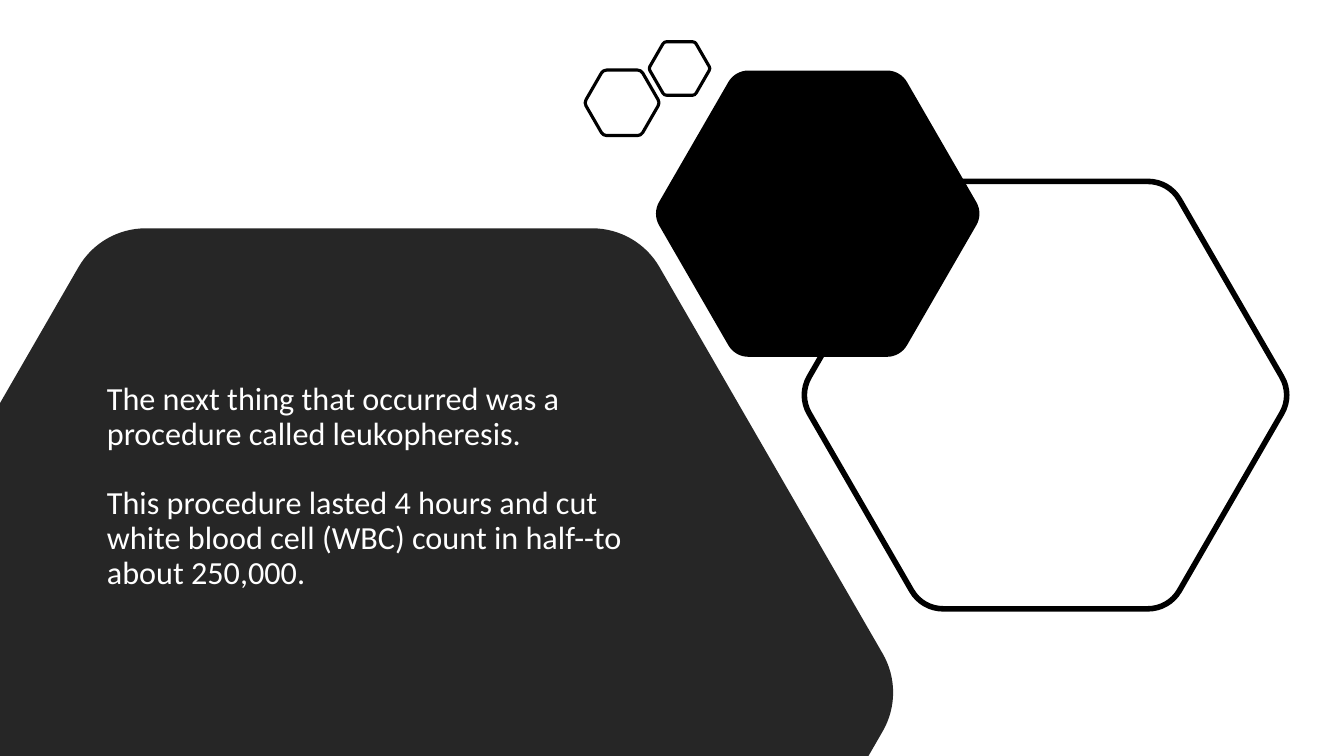
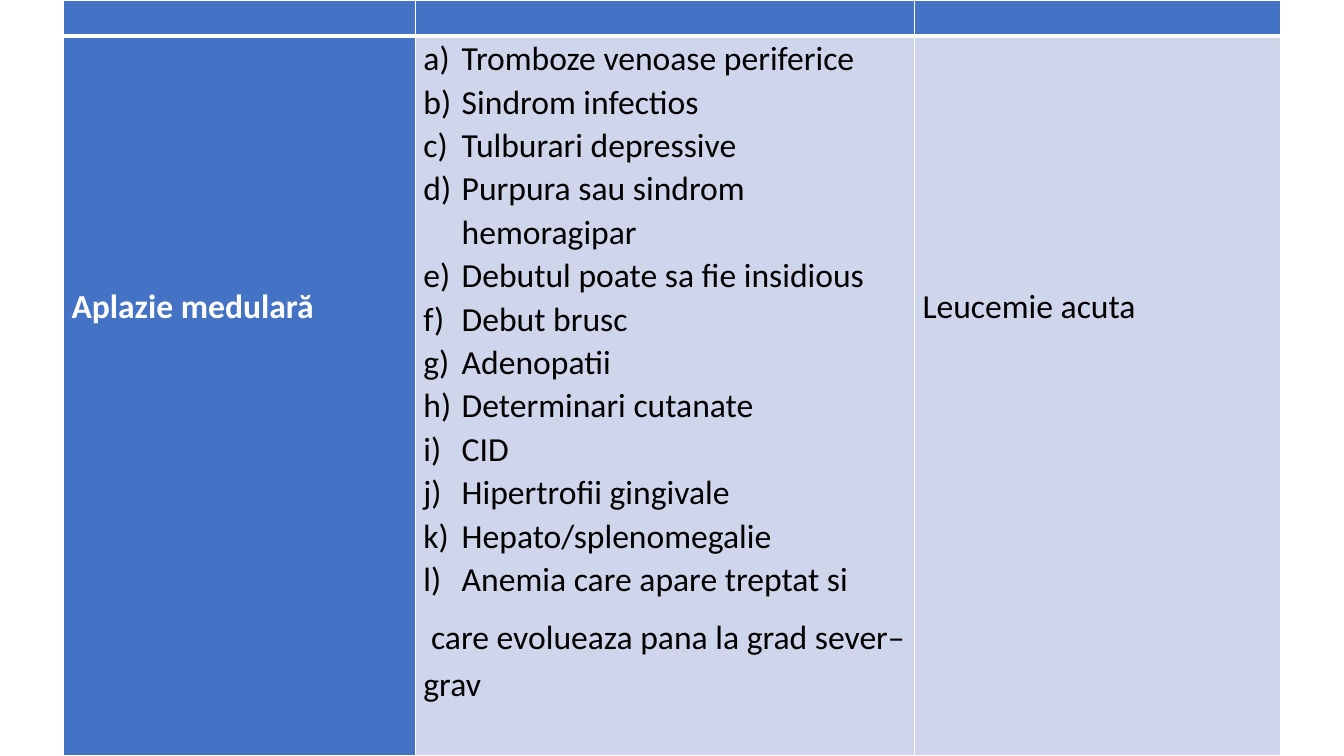
import math

import lxml.etree
import pptx
import pptx.dml.color
import pptx.enum.text
import pptx.oxml.ns
import pptx.util

Inches, Pt = pptx.util.Inches, pptx.util.Pt
RGBColor = pptx.dml.color.RGBColor
qn = pptx.oxml.ns.qn

BLACK = RGBColor(0x00, 0x00, 0x00)
WHITE = RGBColor(0xFF, 0xFF, 0xFF)
CHARCOAL = RGBColor(0x26, 0x26, 0x26)
BLUE = RGBColor(0x44, 0x72, 0xC4)
PALE_BLUE = RGBColor(0xCF, 0xD5, 0xEA)

FONT = "Calibri"
SLIDE_WIDTH, SLIDE_HEIGHT = 13.33, 7.5
TITLE_ONLY, BLANK = 5, 6

SIGNS = [
    "Tromboze venoase periferice",
    "Sindrom infectios",
    "Tulburari depressive",
    "Purpura sau sindrom hemoragipar",
    "Debutul poate sa fie insidious",
    "Debut brusc",
    "Adenopatii",
    "Determinari cutanate",
    "CID",
    "Hipertrofii gingivale",
    "Hepato/splenomegalie",
    "Anemia care apare treptat si",
]


def hexagon_corners(center_x, center_y, height, radius):
    """Four Bezier points for each rounded corner of a flat-topped hexagon."""
    reach = (height - 2 * radius) / math.sqrt(3)
    handle = 4 / 3 * math.tan(math.radians(15))
    corners = []
    for degrees in range(0, 360, 60):
        corner = math.radians(degrees)
        arc_x = center_x + reach * math.cos(corner)
        arc_y = center_y + reach * math.sin(corner)
        start, end = corner - math.pi / 6, corner + math.pi / 6
        corners.append([
            (arc_x + radius * (math.cos(angle) - pull * math.sin(angle)),
             arc_y + radius * (math.sin(angle) + pull * math.cos(angle)))
            for angle, pull in ((start, 0), (start, handle), (end, -handle), (end, 0))])
    return corners


def clip(points, axis, limit, side):
    """Keep the part of an outline beyond (side 1) or before (side -1) a limit."""
    kept = []
    for start, end in zip(points, points[1:] + points[:1]):
        inside = [side * (point[axis] - limit) >= 0 for point in (start, end)]
        if inside[0]:
            kept.append(start)
        if inside[0] != inside[1]:
            share = (limit - start[axis]) / (end[axis] - start[axis])
            kept.append(tuple(a + share * (b - a) for a, b in zip(start, end)))
    return kept


class Deck:
    """Shared style and the slide being built."""

    def __init__(self):
        self.presentation = pptx.Presentation()
        self.presentation.slide_width = Inches(SLIDE_WIDTH)
        self.presentation.slide_height = Inches(SLIDE_HEIGHT)
        self.slide = None

    def add_slide(self, layout):
        layouts = self.presentation.slide_layouts
        self.slide = self.presentation.slides.add_slide(layouts[layout])

    def style(self, paragraph, size, color, bold=False, spacing=1.0, after=0):
        paragraph.line_spacing = spacing
        paragraph.space_before = Pt(0)
        paragraph.space_after = Pt(after)
        paragraph.alignment = pptx.enum.text.PP_ALIGN.LEFT
        for run in paragraph.runs:
            run.font.name = FONT
            run.font.size = Pt(size)
            run.font.bold = bold
            run.font.color.rgb = color

    def hexagon(self, center_x, center_y, height, radius, fill=None, line_width=0):
        corners = hexagon_corners(center_x, center_y, height, radius)
        points = sum(corners, [])
        for axis, limit, side in ((0, 0, 1), (1, SLIDE_HEIGHT, -1)):
            points = clip(points, axis, limit, side)
        outline = [(Inches(x), Inches(y)) for x, y in points]
        builder = self.slide.shapes.build_freeform(*outline[0])
        builder.add_line_segments(outline[1:], close=True)
        shape = builder.convert_to_shape()
        # Bend each corner: its last three segments become one curve
        segments = list(shape._element.iter(qn("a:lnTo")))
        first_handles = {corner[1] for corner in corners}
        for index, point in enumerate(points[1:]):
            if point in first_handles:
                curve = lxml.etree.Element(qn("a:cubicBezTo"))
                segments[index].addprevious(curve)
                for segment in segments[index:index + 3]:
                    curve.append(segment[0])
                    segment.getparent().remove(segment)
        shape.shadow.inherit = False
        if fill is None:
            shape.fill.background()
        else:
            shape.fill.solid()
            shape.fill.fore_color.rgb = fill
        if line_width:
            shape.line.color.rgb = BLACK
            shape.line.width = Pt(line_width)
        else:
            shape.line.fill.background()
        return shape

    def title(self, left, top, width, height, paragraphs, size, gap):
        title = self.slide.shapes.title
        title.left, title.top = Inches(left), Inches(top)
        title.width, title.height = Inches(width), Inches(height)
        frame = title.text_frame
        frame.text = "\n".join(paragraphs)
        frame.word_wrap = True
        frame.auto_size = pptx.enum.text.MSO_AUTO_SIZE.NONE
        frame.vertical_anchor = pptx.enum.text.MSO_ANCHOR.MIDDLE
        for paragraph in frame.paragraphs:
            self.style(paragraph, size, WHITE, spacing=0.9, after=gap)
        frame.paragraphs[-1].space_after = Pt(0)
        # The title stands in front of the panel
        self.slide.shapes._spTree.append(title._element)

    def table(self, left, top, widths, heights):
        frame = self.slide.shapes.add_table(
            len(heights), len(widths), Inches(left), Inches(top),
            Inches(sum(widths)), Inches(sum(heights)))
        table = frame.table
        table.horz_banding = False
        for column, width in zip(table.columns, widths):
            column.width = Inches(width)
        for row, height in zip(table.rows, heights):
            row.height = Inches(height)
        return table

    def cell(self, cell, fill, top_line=1, bottom_line=1, text_top=0):
        cell.fill.solid()
        cell.fill.fore_color.rgb = fill
        cell.margin_left = cell.margin_right = Inches(0.08)
        cell.margin_top, cell.margin_bottom = Inches(text_top), 0
        borders = (("L", 1), ("R", 1), ("T", top_line), ("B", bottom_line))
        properties = cell._tc.get_or_add_tcPr()
        for position, (side, width) in enumerate(borders):
            line = lxml.etree.Element(qn("a:ln" + side), w=str(Pt(width)))
            solid = lxml.etree.SubElement(line, qn("a:solidFill"))
            lxml.etree.SubElement(solid, qn("a:srgbClr"), val=str(WHITE))
            properties.insert(position, line)

    def letter(self, paragraph, indent):
        properties = paragraph._p.get_or_add_pPr()
        properties.set("marL", str(Inches(indent)))
        properties.set("indent", str(-Inches(indent)))
        lxml.etree.SubElement(properties, qn("a:buAutoNum"), type="alphaLcParenR")


def build_procedure(deck):
    deck.add_slide(TITLE_ONLY)
    # Large hexagons
    deck.hexagon(10.37, 3.92, 4.24, 0.36, line_width=4)
    deck.hexagon(8.11, 2.12, 2.84, 0.23, fill=BLACK)
    deck.hexagon(3.66, 6.87, 9.21, 0.77, fill=CHARCOAL)
    # Text on the dark panel
    deck.title(0.96, 3.22, 5.6, 3.22, [
        "The next thing that occurred was a procedure called leukopheresis.",
        "This procedure lasted 4 hours and cut white blood cell (WBC) count "
        "in half--to about 250,000.",
    ], size=23, gap=25)
    # Pair of small hexagons
    pair = [deck.hexagon(6.17, 1.02, 0.65, 0.06, line_width=2.25),
            deck.hexagon(6.74, 0.68, 0.53, 0.04, line_width=2.25)]
    deck.slide.shapes.add_group_shape(pair)


def build_comparison(deck):
    deck.add_slide(BLANK)
    table = deck.table(0.63, 0, (3.49, 4.95, 3.63), (0.36, 7.14))
    # Header band
    for column in range(3):
        deck.cell(table.cell(0, column), BLUE, bottom_line=3)
    # Conditions on either side
    conditions = ((0, "Aplazie medulară", BLUE, WHITE, True),
                  (2, "Leucemie acuta", PALE_BLUE, BLACK, False))
    for column, condition, fill, color, bold in conditions:
        cell = table.cell(1, column)
        deck.cell(cell, fill, top_line=3, text_top=2.42)
        cell.text_frame.text = condition
        deck.style(cell.text_frame.paragraphs[0], 24, color, bold, 1.15)
    # Lettered signs and the closing remark
    signs = table.cell(1, 1)
    deck.cell(signs, PALE_BLUE, top_line=3)
    signs.text_frame.text = "\n".join(
        SIGNS + [" care evolueaza pana la grad sever– grav"])
    *lettered, remark = signs.text_frame.paragraphs
    for paragraph in lettered:
        deck.style(paragraph, 24, BLACK, spacing=1.06)
        deck.letter(paragraph, 0.38)
    lettered[-1].space_after = Pt(8)
    deck.style(remark, 24, BLACK, spacing=1.15)


def main():
    deck = Deck()
    build_procedure(deck)
    build_comparison(deck)
    deck.presentation.save("out.pptx")


if __name__ == "__main__":
    main()
